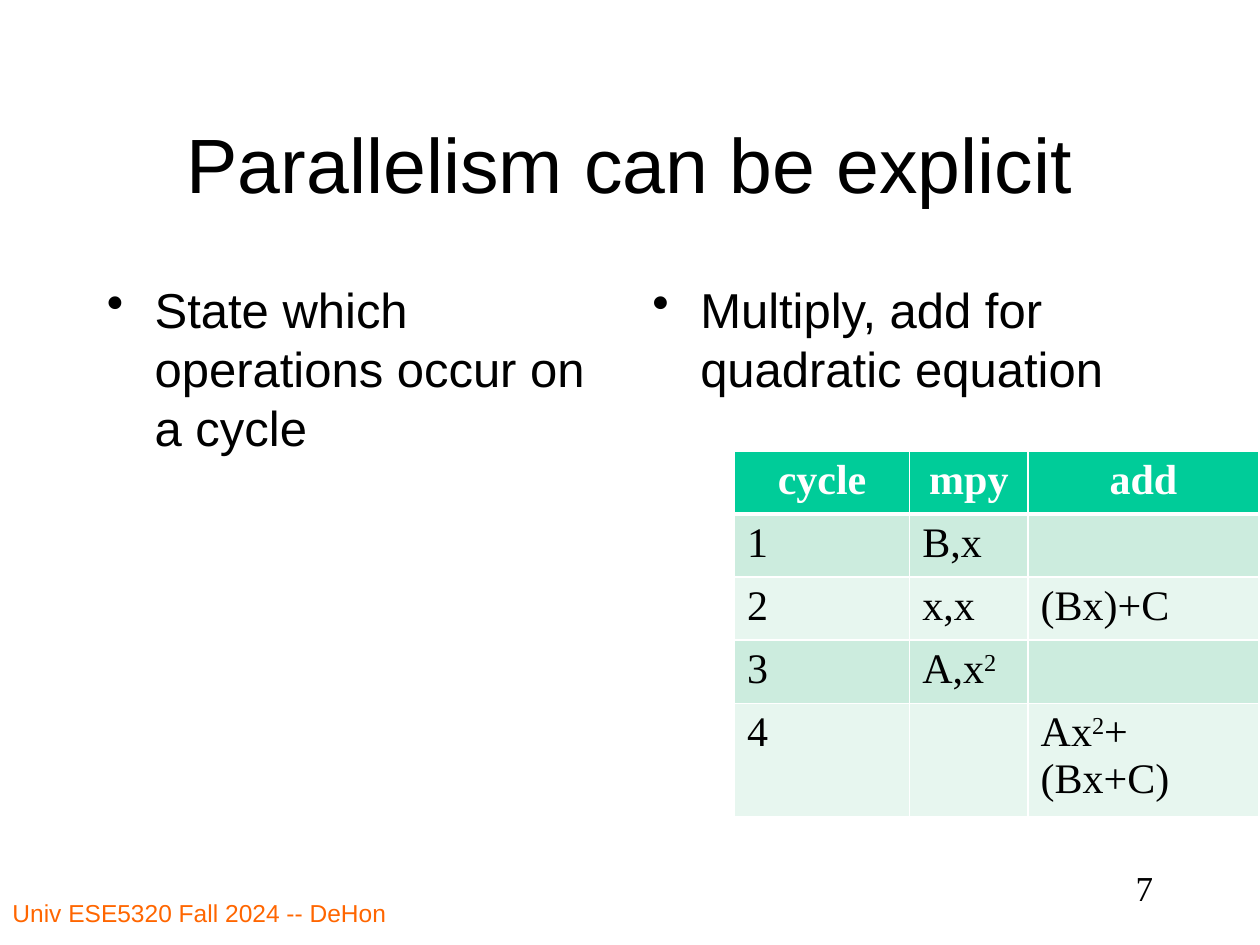
from pptx import Presentation
from pptx.dml.color import RGBColor
from pptx.enum.text import MSO_ANCHOR, PP_ALIGN
from pptx.oxml import parse_xml
from pptx.oxml.ns import nsdecls
from pptx.util import Inches, Pt

BLACK = RGBColor(0, 0, 0)
WHITE = RGBColor(255, 255, 255)
ORANGE = RGBColor(0xFF, 0x66, 0x00)
HEADER = RGBColor(0x00, 0xCC, 0x99)
BANDS = [RGBColor(0xE7, 0xF6, 0xEF), RGBColor(0xCC, 0xEC, 0xDE)]
SANS, SERIF = "Arial", "Times New Roman"


def add_run(p, text, size, font, color, bold=False):
    r = p.add_run()
    r.text = text
    r.font.size = Pt(size)
    r.font.name = font
    r.font.bold = bold
    r.font.color.rgb = color
    return r


def add_text(s, left, top, width, height, text, size, font, color):
    box = s.shapes.add_textbox(Inches(left), Inches(top), Inches(width), Inches(height))
    box.text_frame.word_wrap = True
    p = box.text_frame.paragraphs[0]
    add_run(p, text, size, font, color)
    return p


prs = Presentation()
prs.slide_width, prs.slide_height = Inches(10), Inches(7.5)
s = prs.slides.add_slide(prs.slide_layouts[5])

# Title
title = s.shapes.title
title.left, title.top = Inches(0.75), Inches(0.67)
title.width, title.height = Inches(8.5), Inches(1.25)
tf = title.text_frame
tf.vertical_anchor = MSO_ANCHOR.MIDDLE
p = tf.paragraphs[0]
p.alignment = PP_ALIGN.CENTER
add_run(p, "Parallelism can be explicit", 44, SANS, BLACK)

# Two bullet columns
bullets = [(0.75, "State which operations occur on a cycle"),
           (5.08, "Multiply, add for quadratic equation")]
for left, text in bullets:
    p = add_text(s, left, 2.17, 4.17, 4.5, text, 28, SANS, BLACK)
    p.space_before = Pt(5.6)
    pPr = p._p.get_or_add_pPr()
    pPr.set("marL", str(Inches(0.38)))
    pPr.set("indent", str(-Inches(0.38)))
    pPr.append(parse_xml(f'<a:buChar {nsdecls("a")} char="•"/>'))

# Footer and slide number
add_text(s, 0, 7.08, 4.58, 0.42, "Univ ESE5320 Fall 2024 -- DeHon", 14, SANS, ORANGE)
p = add_text(s, 7.17, 6.83, 2.08, 0.5, "7", 20, SERIF, BLACK)
p.alignment = PP_ALIGN.RIGHT

# Schedule table: each cell is a list of runs, "^" marks a superscript
rows = [
    [["cycle"], ["mpy"], ["add"]],
    [["1"], ["B,x"], []],
    [["2"], ["x,x"], ["(Bx)+C"]],
    [["3"], ["A,x", "^2"], []],
    [["4"], [], ["Ax", "^2", "+(Bx+C)"]],
]
widths = [1.39, 0.94, 1.83]
table = s.shapes.add_table(len(rows), len(widths), Inches(5.83), Inches(3.58),
                           Inches(4.17), Inches(2.03)).table
for column, width in zip(table.columns, widths):
    column.width = Inches(width)

for i, row in enumerate(rows):
    table.rows[i].height = Inches(0.41)
    for j, runs in enumerate(row):
        cell = table.cell(i, j)
        tcPr = cell._tc.get_or_add_tcPr()
        for side in "LRTB":
            heavy = (i, side) in [(0, "B"), (1, "T")]
            tcPr.append(parse_xml(
                f'<a:ln{side} {nsdecls("a")} w="{Pt(3 if heavy else 1)}"><a:solidFill>'
                f'<a:srgbClr val="{WHITE}"/></a:solidFill></a:ln{side}>'))
        cell.fill.solid()
        cell.fill.fore_color.rgb = BANDS[i % 2] if i else HEADER
        p = cell.text_frame.paragraphs[0]
        p.alignment = PP_ALIGN.LEFT if i else PP_ALIGN.CENTER
        for text in runs:
            r = add_run(p, text.lstrip("^"), 24, SERIF, BLACK if i else WHITE, bold=i == 0)
            if text.startswith("^"):
                r._r.get_or_add_rPr().set("baseline", "30000")

prs.save("out.pptx")
